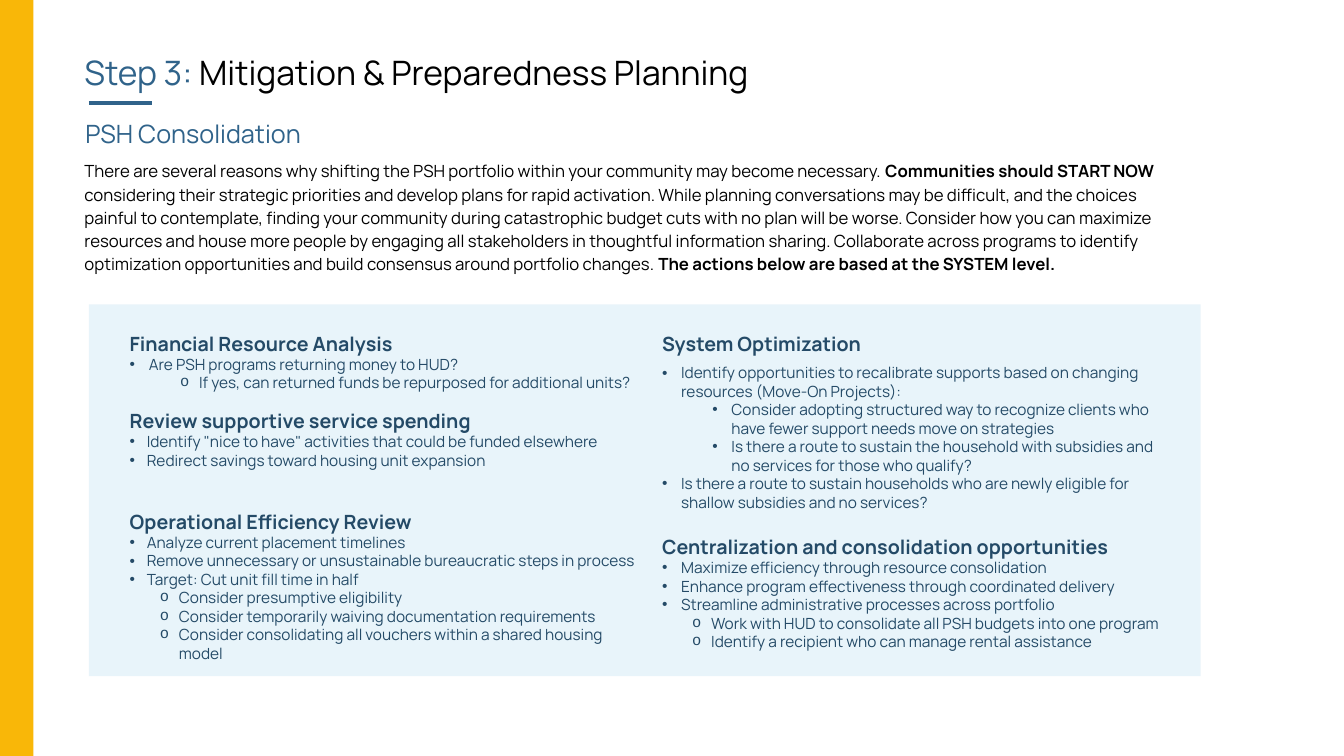
from collections import namedtuple
from dataclasses import dataclass

from lxml import etree
from pptx import Presentation
from pptx.dml.color import RGBColor
from pptx.enum.shapes import MSO_CONNECTOR, MSO_SHAPE
from pptx.oxml.ns import qn
from pptx.util import Cm, Pt

RECTANGLE = MSO_SHAPE.RECTANGLE
STRAIGHT = MSO_CONNECTOR.STRAIGHT

Box = namedtuple("Box", "left top width height")
Level = namedtuple("Level", "mark margin hanging")


@dataclass(frozen=True)
class Theme:
    font: str = "Manrope"
    black: str = "000000"
    blue: str = "30638A"
    navy: str = "244A67"
    pale: str = "E8F4FA"
    yellow: str = "F9B708"
    title: int = 24
    subtitle: int = 18
    heading: int = 14
    intro: int = 12
    item: int = 11


THEME = Theme()
SLIDE = Box(0, 0, 33.87, 19.05)

# Bullet styles: mark, text margin and hanging indent in cm
DOT = Level("•", 0.48, 0.48)
TIGHT_DOT = Level("•", 0.43, 0.43)
DEEP_DOT = Level("•", 1.75, 0.48)
RING = Level("o", 1.24, 0.48)
DEEP_RING = Level("o", 1.75, 0.48)
MARK_FONTS = {"•": "Arial", "o": "Courier New"}

INTRO = [
    ("There are several reasons why shifting the PSH portfolio within your community "
     "may become necessary. ", False),
    ("Communities should START NOW ", True),
    ("considering their strategic priorities and develop plans for rapid activation. "
     "While planning conversations may be difficult, and the choices painful to "
     "contemplate, finding your community during catastrophic budget cuts with no plan "
     "will be worse. Consider how you can maximize resources and house more people by "
     "engaging all stakeholders in thoughtful information sharing. Collaborate across "
     "programs to identify optimization opportunities and build consensus around "
     "portfolio changes. ", False),
    ("The actions below are based at the SYSTEM level.", True),
]

# Each topic: heading, space before, space after, items
TOPICS = [
    ("Financial Resource Analysis", 0, 0, [
        (DOT, "Are PSH programs returning money to HUD?"),
        (DEEP_RING, "If yes, can returned funds be repurposed for additional units?"),
    ]),
    ("Review supportive service spending", 12, 0, [
        (TIGHT_DOT, "Identify \"nice to have\" activities that could be funded elsewhere"),
        (TIGHT_DOT, "Redirect savings toward housing unit expansion"),
    ]),
    ("Operational Efficiency Review", 28.7, 0, [
        (TIGHT_DOT, "Analyze current placement timelines"),
        (TIGHT_DOT, "Remove unnecessary or unsustainable bureaucratic steps in process"),
        (TIGHT_DOT, "Target: Cut unit fill time in half"),
        (RING, "Consider presumptive eligibility"),
        (RING, "Consider temporarily waiving documentation requirements"),
        (RING, "Consider consolidating all vouchers within a shared housing model"),
    ]),
    ("System Optimization", 0, 6, [
        (DOT, "Identify opportunities to recalibrate supports based on changing "
              "resources (Move-On Projects):"),
        (DEEP_DOT, "Consider adopting structured way to recognize clients who have "
                   "fewer support needs move on strategies"),
        (DEEP_DOT, "Is there a route to sustain the household with subsidies and no "
                   "services for those who qualify?"),
        (DOT, "Is there a route to sustain households who are newly eligible for "
              "shallow subsidies and no services?"),
    ]),
    ("Centralization and consolidation opportunities", 16.7, 0, [
        (DOT, "Maximize efficiency through resource consolidation"),
        (DOT, "Enhance program effectiveness through coordinated delivery"),
        (DOT, "Streamline administrative processes across portfolio"),
        (RING, "Work with HUD to consolidate all PSH budgets into one program"),
        (RING, "Identify a recipient who can manage rental assistance"),
    ]),
]


def lengths(box):
    return [Cm(value) for value in box]


def add_text(para, text, *, size, color, bold=False):
    span = para.add_run()
    span.text = text
    span.font.name = THEME.font
    span.font.size = Pt(size)
    span.font.bold = bold
    span.font.color.rgb = RGBColor.from_string(color)


def add_text_box(page, box):
    shape = page.shapes.add_textbox(*lengths(box))
    shape.text_frame.word_wrap = True
    return shape


def add_block(page, box, color):
    shape = page.shapes.add_shape(RECTANGLE, *lengths(box))
    shape.shadow.inherit = False
    shape.fill.solid()
    shape.fill.fore_color.rgb = RGBColor.from_string(color)
    shape.line.fill.background()


def set_bullet(para, level):
    if level.margin > 1:
        para.level = 1
    properties = para._p.get_or_add_pPr()
    properties.set("marL", str(Cm(level.margin)))
    properties.set("indent", str(-Cm(level.hanging)))
    etree.SubElement(properties, qn("a:buFont"), typeface=MARK_FONTS[level.mark])
    etree.SubElement(properties, qn("a:buChar"), char=level.mark)


def add_header(page, box):
    # Title with its short rule
    title = add_text_box(page, Box(box.left, box.top, box.width, 1.63))
    para = title.text_frame.paragraphs[0]
    add_text(para, "Step 3: ", size=THEME.title, color=THEME.blue)
    add_text(para, "Mitigation & Preparedness Planning", size=THEME.title, color=THEME.black)

    start, height = box.left + 0.36, box.top + 1.4
    rule = page.shapes.add_connector(
        STRAIGHT, Cm(start), Cm(height), Cm(start + 1.6), Cm(height))
    rule.line.color.rgb = RGBColor.from_string(THEME.blue)
    rule.line.width = Pt(2.5)
    etree.SubElement(rule.element.spPr, qn("a:effectLst"))

    # Subtitle
    subtitle = add_text_box(page, Box(box.left + 0.02, box.top + 1.48, 16.94, 1.14))
    para = subtitle.text_frame.paragraphs[0]
    para.line_spacing = 1.25
    para.space_after = Pt(12)
    add_text(para, "PSH Consolidation", size=THEME.subtitle, color=THEME.blue)


def add_intro(page, box):
    para = add_text_box(page, box).text_frame.paragraphs[0]
    para.line_spacing = 1.15
    para.space_after = Pt(6)
    for text, bold in INTRO:
        add_text(para, text, size=THEME.intro, color=THEME.black, bold=bold)


def add_topics(page, box):
    # Pale panel behind two flowing text columns
    add_block(page, box, THEME.pale)
    shape = add_text_box(
        page, Box(box.left + 0.78, box.top + 0.56, box.width - 1.2, box.height - 0.23))
    body = shape.element.xpath(".//a:bodyPr")[0]
    body.set("numCol", "2")
    body.set("spcCol", str(Cm(0.51)))

    frame = shape.text_frame
    para = frame.paragraphs[0]
    for number, (heading, before, after, items) in enumerate(TOPICS):
        if number:
            para = frame.add_paragraph()
        para.space_before, para.space_after = Pt(before), Pt(after)
        add_text(para, heading, size=THEME.heading, color=THEME.navy, bold=True)
        for level, text in items:
            para = frame.add_paragraph()
            set_bullet(para, level)
            add_text(para, text, size=THEME.item, color=THEME.navy)


def main():
    deck = Presentation()
    deck.slide_width, deck.slide_height = Cm(SLIDE.width), Cm(SLIDE.height)
    page = deck.slides.add_slide(deck.slide_layouts[6])
    add_block(page, Box(0, 0, 0.84, SLIDE.height), THEME.yellow)
    add_header(page, Box(1.88, 1.19, 31.45, 2.62))
    add_intro(page, Box(1.88, 3.86, 28.37, 3.58))
    add_topics(page, Box(2.24, 7.67, 28.02, 9.37))
    deck.save("out.pptx")


if __name__ == "__main__":
    main()
